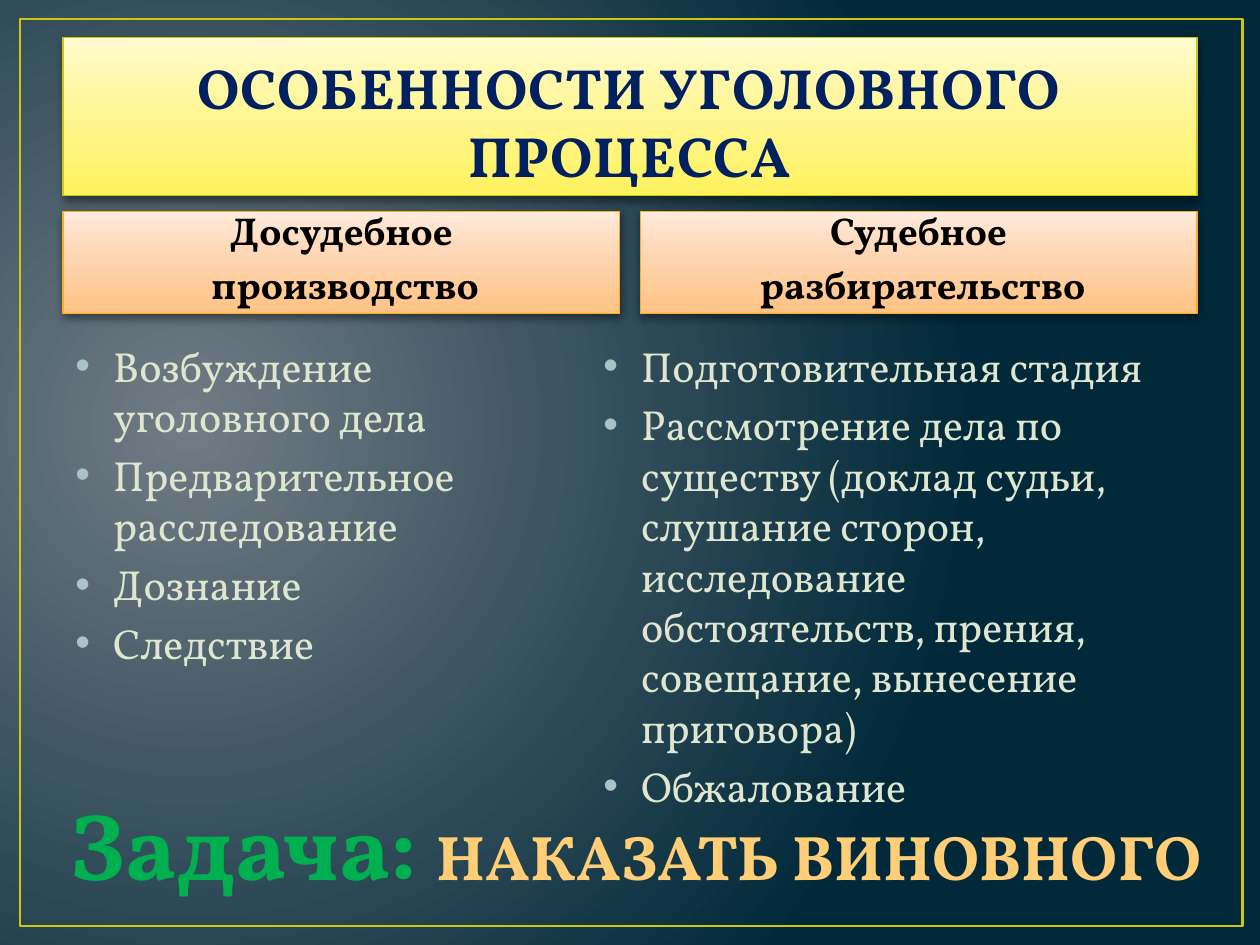
from lxml import etree
from pptx import Presentation
from pptx.dml.color import RGBColor
from pptx.enum.shapes import MSO_SHAPE
from pptx.enum.text import MSO_ANCHOR, PP_ALIGN
from pptx.oxml import parse_xml
from pptx.oxml.ns import nsdecls, qn
from pptx.util import Pt

FONT = "Vollkorn"
NAVY = RGBColor(0x00, 0x20, 0x60)
BLACK = RGBColor(0x00, 0x00, 0x00)
PALE = RGBColor(0xDF, 0xE6, 0xD0)
GREEN = RGBColor(0x00, 0xB0, 0x50)
AMBER = RGBColor(0xFF, 0xCE, 0x77)
OLIVE = RGBColor(0xCF, 0xC6, 0x0D)
ORANGE = RGBColor(0xFF, 0xAD, 0x1C)
OUTLINE = RGBColor(0x38, 0x4F, 0x55)
BULLET = RGBColor(0xAC, 0xC2, 0xC9)
SLATE = [(0, RGBColor(0x71, 0x7C, 0x84)), (100, RGBColor(0x01, 0x29, 0x3A))]
YELLOWS = [(0, RGBColor(0xFE, 0xF2, 0x5E)), (65, RGBColor(0xFF, 0xF7, 0xA2)),
           (100, RGBColor(0xFF, 0xFB, 0xCF))]
PEACHES = [(0, RGBColor(0xFF, 0xC2, 0x83)), (65, RGBColor(0xFF, 0xD9, 0xBA)),
           (100, RGBColor(0xFF, 0xEB, 0xDC))]
UPWARD = '<a:lin ang="16200000" scaled="0"/>'
RADIAL = ('<a:path path="circle">'
          '<a:fillToRect l="15000" t="50000" r="85000" b="60000"/></a:path>')


def set_gradient(element, stops, direction):
    """Give the gradient fill inside element its stops and direction."""
    old = next(element.iter(qn("a:gradFill")))
    gs = "".join(f'<a:gs pos="{pos * 1000}"><a:srgbClr val="{color}"/></a:gs>'
                 for pos, color in stops)
    new = parse_xml(f'<a:gradFill {nsdecls("a")} rotWithShape="1">'
                    f'<a:gsLst>{gs}</a:gsLst>{direction}</a:gradFill>')
    old.getparent().replace(old, new)


def add_text(p, text, size=24, color=PALE, bold=False, align=None,
             before=None, bullet=False):
    """Add a run to a paragraph and format both."""
    r = p.add_run()
    r.text = text
    r.font.name, r.font.size, r.font.bold = FONT, Pt(size), bold
    r.font.color.rgb = color
    if align is not None:
        p.alignment = align
    if before is not None:
        p.space_before = Pt(before)
    if bullet:
        pPr = p._p.get_or_add_pPr()
        pPr.set("marL", str(Pt(21.6)))
        pPr.set("indent", str(-Pt(21.6)))
        clr = etree.SubElement(pPr, qn("a:buClr"))
        etree.SubElement(clr, qn("a:srgbClr"), val=str(BULLET))
        etree.SubElement(pPr, qn("a:buFont"), typeface="Arial")
        etree.SubElement(pPr, qn("a:buChar"), char="•")
    return r


prs = Presentation()
prs.slide_width, prs.slide_height = Pt(720), Pt(540)
s = prs.slides.add_slide(prs.slide_layouts[6])

# Background
s.background.fill.gradient()
set_gradient(s.element, SLATE, RADIAL)

# Frame around the slide
sp = s.shapes.add_shape(MSO_SHAPE.RECTANGLE, Pt(11.5), Pt(10.8), Pt(698.4), Pt(518.4))
sp.shadow.inherit = False
sp.fill.background()
sp.line.color.rgb, sp.line.width = OLIVE, Pt(1.5)

# Title and column headings
LEFT, WIDTH, HEAD_W = 36, 648, 318.2
HEAD_X = [LEFT, LEFT + WIDTH - HEAD_W]
panels = [
    (LEFT, 21.6, WIDTH, 90, YELLOWS, OLIVE, ["ОСОБЕННОСТИ УГОЛОВНОГО ПРОЦЕССА"],
     dict(size=32.4, color=NAVY)),
    (HEAD_X[0], 121, HEAD_W, 58.3, PEACHES, ORANGE, ["Досудебное", " производство"],
     dict(size=22.2, color=BLACK, before=4.44)),
    (HEAD_X[1], 121, HEAD_W, 58.3, PEACHES, ORANGE, ["Судебное", " разбирательство"],
     dict(size=22.2, color=BLACK, before=4.44)),
]
for x, y, w, h, stops, edge, lines, style in panels:
    sp = s.shapes.add_shape(MSO_SHAPE.RECTANGLE, Pt(x), Pt(y), Pt(w), Pt(h))
    sp.fill.gradient()
    set_gradient(sp._element.spPr, stops, UPWARD)
    sp.line.color.rgb, sp.line.width = edge, Pt(0.75)
    sp.shadow.inherit = False
    effects = sp._element.spPr.find(qn("a:effectLst"))
    effects.append(parse_xml(
        f'<a:outerShdw {nsdecls("a")} blurRad="{Pt(5)}" dist="{Pt(2)}" dir="5400000" '
        'rotWithShape="0"><a:srgbClr val="000000"><a:alpha val="43000"/></a:srgbClr>'
        '</a:outerShdw>'))
    tf = sp.text_frame
    tf.word_wrap, tf.vertical_anchor = True, MSO_ANCHOR.BOTTOM
    for i, line in enumerate(lines):
        p = tf.add_paragraph() if i else tf.paragraphs[0]
        r = add_text(p, line, bold=True, align=PP_ALIGN.CENTER, **style)
        if stops is YELLOWS:  # title letters: spacing and outline
            rPr = r.font._element
            rPr.set("spc", "50")
            rPr.insert(0, parse_xml(
                f'<a:ln {nsdecls("a")} w="{Pt(1.05)}"><a:solidFill>'
                f'<a:srgbClr val="{OUTLINE}"/></a:solidFill></a:ln>'))

# Bulleted columns
columns = [
    (36, 306.7, 249.1, ["Возбуждение уголовного дела", "Предварительное расследование",
                        "Дознание", "Следствие"]),
    (337.7, 346.3, 272.2, ["Подготовительная стадия",
                           "Рассмотрение дела по существу (доклад судьи, слушание сторон, "
                           "исследование обстоятельств, прения, совещание, вынесение "
                           "приговора)",
                           "Обжалование"]),
]
for x, w, h, items in columns:
    tf = s.shapes.add_textbox(Pt(x), Pt(190.8), Pt(w), Pt(h)).text_frame
    tf.word_wrap = True
    for i, item in enumerate(items):
        p = tf.add_paragraph() if i else tf.paragraphs[0]
        add_text(p, item, before=4.8, bullet=True)

# Task line
tf = s.shapes.add_textbox(Pt(24.5), Pt(445.7), Pt(677.5), Pt(72.7)).text_frame
tf.word_wrap = False
p = tf.paragraphs[0]
add_text(p, "Задача: ", size=54, color=GREEN, bold=True, align=PP_ALIGN.CENTER)
add_text(p, "НАКАЗАТЬ ВИНОВНОГО", size=36, color=AMBER, bold=True)

prs.save("out.pptx")
